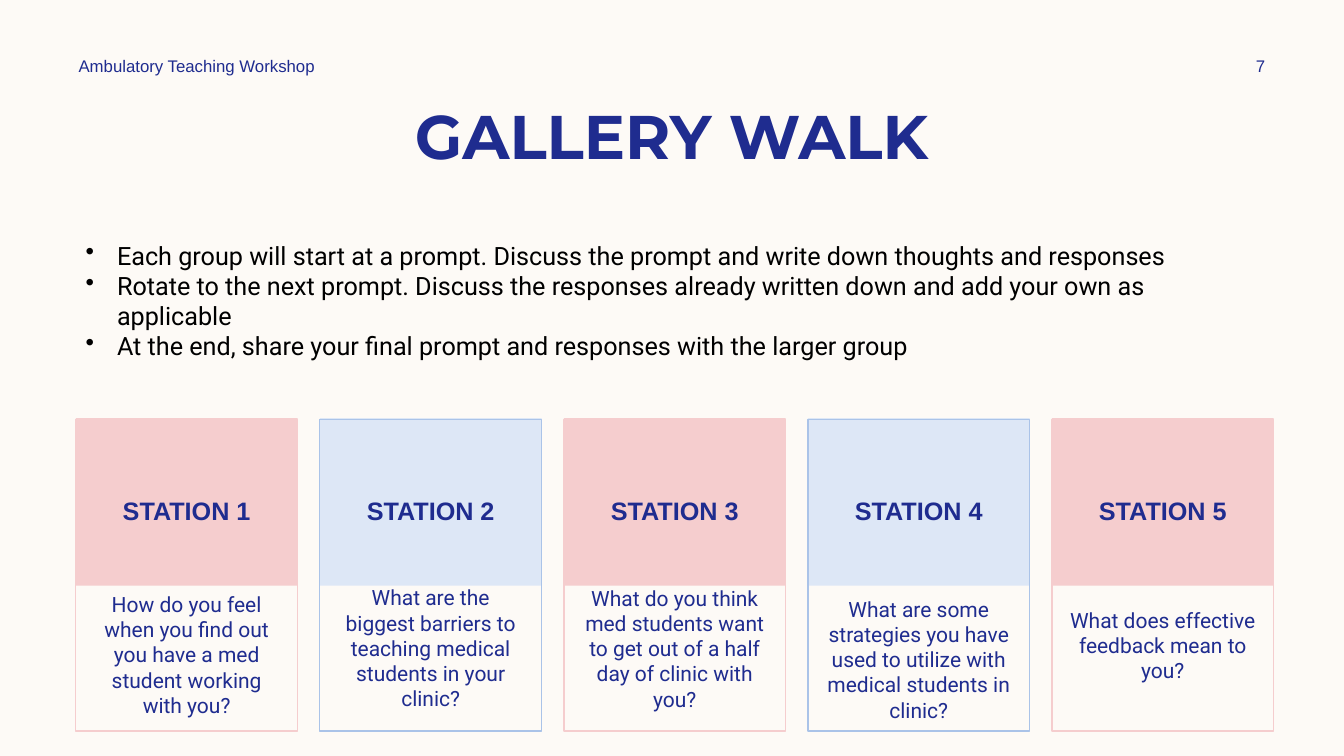
import lxml.etree
import pptx
import pptx.dml.color
import pptx.enum.shapes
import pptx.enum.text
import pptx.oxml.ns
import pptx.util
from pptx.util import Cm

COLOURS = {
    "paper": "FDFAF6",
    "navy": "1F2C8F",
    "black": "000000",
    "pink": "F5CDCE",
    "pale blue": "DDE7F6",
    "blue": "AAC3E8",
}

STATION_LEFT, STATION_STEP, STATION_WIDTH = 1.91, 6.15, 5.59
QUESTION_INSET = 0.13

# Each question with the top and height of its text box in centimetres.
STATIONS = [
    ("How do you feel when you find out you have a med student working with you?", 14.73, 3.53),
    ("What are the biggest barriers to teaching medical students in your clinic?", 14.7, 3.25),
    ("What do you think med students want to get out of a half day of clinic with you?", 14.43, 3.81),
    ("What are some strategies you have used to utilize with medical students in clinic?", 14.99, 3.25),
    ("What does effective feedback mean to you?", 14.42, 3.68),
]

INSTRUCTIONS = [
    "Each group will start at a prompt. Discuss the prompt and write down thoughts and responses",
    "Rotate to the next prompt. Discuss the responses already written down and add your own as applicable",
    "At the end, share your final prompt and responses with the larger group",
]


def colour(name):
    return pptx.dml.color.RGBColor.from_string(COLOURS[name])


def add_bullet(para, indent=0.79):
    properties = para._p.get_or_add_pPr()
    properties.set("marL", str(Cm(indent)))
    properties.set("indent", str(-Cm(indent)))
    bullet = lxml.etree.SubElement(properties, pptx.oxml.ns.qn("a:buChar"))
    bullet.set("char", "•")


def write(shape, lines, size, font="Roboto", ink="navy", bold=False,
          align="LEFT", anchor="MIDDLE", bullets=False):
    """Fill a shape with one formatted paragraph for each line."""
    frame = shape.text_frame
    frame.word_wrap = True
    frame.auto_size = pptx.enum.text.MSO_AUTO_SIZE.NONE
    frame.vertical_anchor = pptx.enum.text.MSO_ANCHOR[anchor]
    for number, line in enumerate(lines):
        para = frame.add_paragraph() if number else frame.paragraphs[0]
        para.alignment = pptx.enum.text.PP_ALIGN[align]
        if bullets:
            add_bullet(para)
        span = para.add_run()
        span.text = line
        span.font.name = font
        span.font.size = pptx.util.Pt(size)
        span.font.bold = bold
        span.font.color.rgb = colour(ink)


def add_text(page, left, top, width, height, lines, **style):
    box = page.shapes.add_textbox(Cm(left), Cm(top), Cm(width), Cm(height))
    write(box, lines, **style)


def add_rectangle(page, left, top, width, height, fill=None, line=None):
    box = page.shapes.add_shape(pptx.enum.shapes.MSO_SHAPE.RECTANGLE,
                                Cm(left), Cm(top), Cm(width), Cm(height))
    box.shadow.inherit = False
    if fill:
        box.fill.solid()
        box.fill.fore_color.rgb = colour(fill)
    else:
        box.fill.background()
    if line:
        box.line.color.rgb = colour(line)
        box.line.width = pptx.util.Pt(1)
    else:
        box.line.fill.background()
    return box


def add_title(page, text):
    title = page.shapes.title
    title.left, title.top, title.width, title.height = Cm(2.11), Cm(2.34), Cm(29.64), Cm(2.13)
    write(title, [text], size=44, font="Montserrat", bold=True, align="CENTER")


def add_station(page, index, question, top, height):
    left = STATION_LEFT + index * STATION_STEP
    fill, line = ("pale blue", "blue") if index % 2 else ("pink", "pink")
    add_rectangle(page, left, 10.54, STATION_WIDTH, 4.22, fill=fill)
    card = add_rectangle(page, left, 10.57, STATION_WIDTH, 7.85, line=line)
    card.text_frame.margin_top = Cm(1.91)
    write(card, [f"STATION {index + 1}"], size=18, font="Arial", bold=True,
          align="CENTER", anchor="TOP")
    add_text(page, left + QUESTION_INSET, top, STATION_WIDTH - 2 * QUESTION_INSET, height,
             [question], size=15, align="CENTER")


def main():
    deck = pptx.Presentation()
    deck.slide_width, deck.slide_height = Cm(33.87), Cm(19.05)
    page = deck.slides.add_slide(deck.slide_layouts.get_by_name("Title Only"))
    page.background.fill.solid()
    page.background.fill.fore_color.rgb = colour("paper")

    add_title(page, "GALLERY WALK")
    add_text(page, 1.73, 1.27, 8.89, 0.76, ["Ambulatory Teaching Workshop"], size=12, font="Arial")
    add_text(page, 30.4, 1.27, 2.74, 0.76, ["7"], size=12, font="Arial", align="CENTER")
    add_text(page, 1.91, 5.92, 30.07, 2.57, INSTRUCTIONS, size=18, ink="black",
             anchor="TOP", bullets=True)
    for index, (question, top, height) in enumerate(STATIONS):
        add_station(page, index, question, top, height)

    deck.save("out.pptx")


if __name__ == "__main__":
    main()
